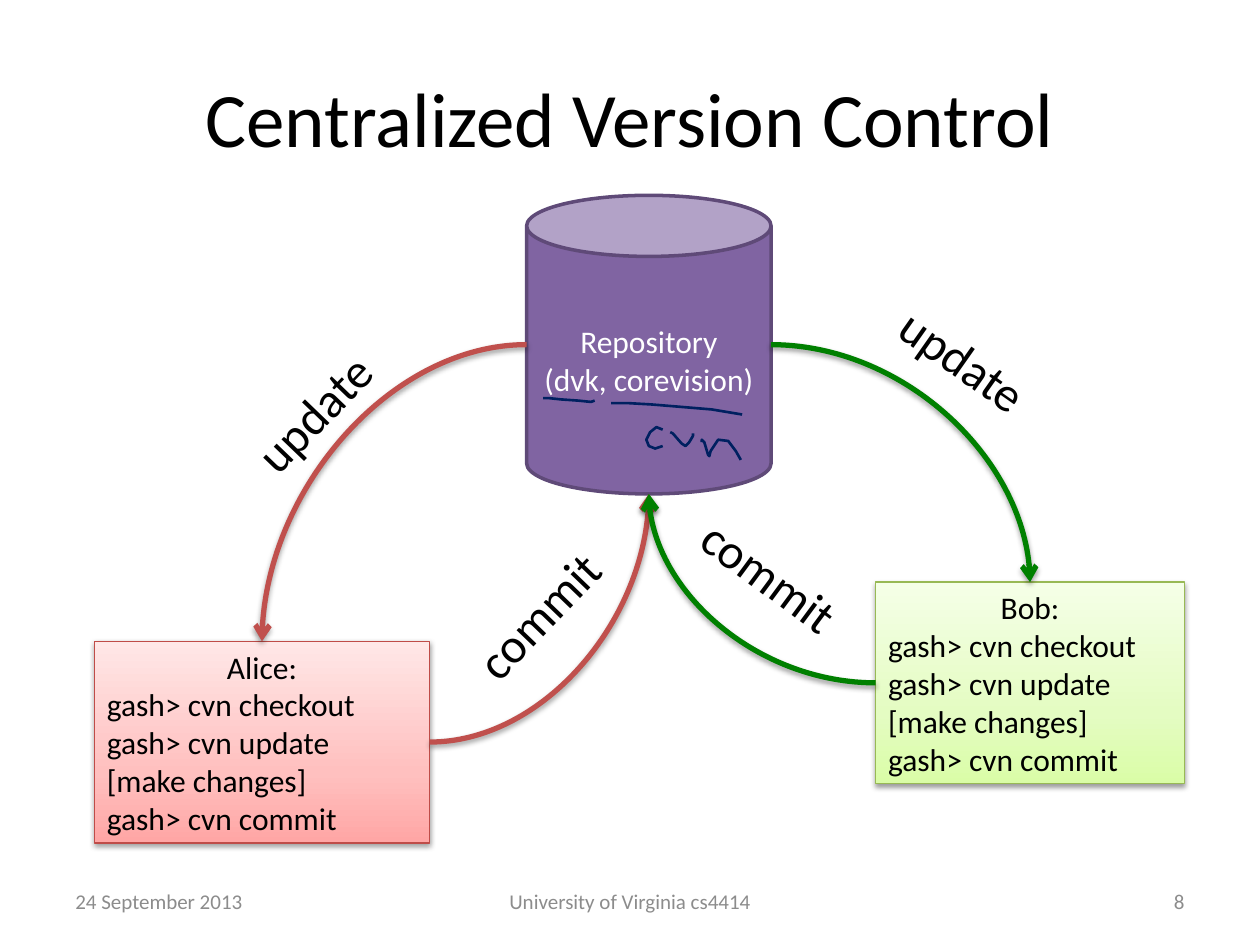
from dataclasses import dataclass

from lxml import etree
from pptx import Presentation
from pptx.dml.color import RGBColor
from pptx.enum.shapes import MSO_CONNECTOR, MSO_SHAPE
from pptx.enum.text import MSO_ANCHOR, MSO_AUTO_SIZE, PP_ALIGN
from pptx.oxml.ns import qn
from pptx.util import Inches, Pt

CURVE = MSO_CONNECTOR.CURVE
CAN, RECTANGLE = MSO_SHAPE.CAN, MSO_SHAPE.RECTANGLE
MIDDLE, TOP = MSO_ANCHOR.MIDDLE, MSO_ANCHOR.TOP
LEFT, CENTER, RIGHT = PP_ALIGN.LEFT, PP_ALIGN.CENTER, PP_ALIGN.RIGHT
GROW = MSO_AUTO_SIZE.SHAPE_TO_FIT_TEXT

WIDTH, HEIGHT = Inches(10), Inches(7.5)

# Connection site numbers of the two preset shapes
BOX_TOP, BOX_LEFT, BOX_RIGHT = 0, 1, 3
CAN_LEFT, CAN_BOTTOM, CAN_RIGHT = 2, 3, 4


@dataclass(frozen=True)
class Theme:
    font: str = "Calibri"
    title: int = 44
    label: int = 28
    body: int = 18
    footer: int = 12
    text: str = "000000"
    muted: str = "8C8C8C"
    inverse: str = "FFFFFF"
    repository: str = "8064A2"
    repository_edge: str = "5F4A78"
    alice_fill: tuple = ("FFA6A5", "FFC0BF", "FFE7E7")
    alice_edge: str = "BF4C48"
    alice_flow: str = "C0504D"
    bob_fill: tuple = ("DAFDA7", "E4FCC2", "F5FFE7")
    bob_edge: str = "98B955"
    bob_flow: str = "008000"
    ink: str = "002060"


THEME = Theme()
GRADIENT_STOPS = (0, 35, 100)
COMMANDS = ("gash> cvn checkout", "gash> cvn update", "[make changes]", "gash> cvn commit")

# Pen strokes, in thousandths of the slide's width: two underlines, then c, v, n
INK_STROKES = (
    ((472, 318), (469, 319), (459, 318), (445, 317), (436, 316), (431, 316)),
    ((485, 320), (490, 320), (499, 320), (517, 321), (541, 323), (565, 325),
     (583, 328), (589, 329)),
    ((526, 341), (521, 339), (516, 343), (513, 349), (515, 354), (520, 356), (526, 354)),
    ((532, 343), (534, 344), (541, 352), (544, 354), (547, 351), (550, 346), (550, 344)),
    ((557, 351), (557, 349), (559, 351), (562, 361), (563, 362), (564, 358),
     (570, 349), (578, 350), (584, 358), (588, 365)),
)


def area(left, top, width, height):
    """Turn percentages of the slide's size into lengths."""
    return (int(WIDTH * left / 100), int(HEIGHT * top / 100),
            int(WIDTH * width / 100), int(HEIGHT * height / 100))


def write(shape, lines, size, color, anchor=MIDDLE):
    """Fill a shape with (text, alignment) lines."""
    frame = shape.text_frame
    frame.word_wrap = True
    frame.vertical_anchor = anchor
    for index, (text, alignment) in enumerate(lines):
        paragraph = frame.add_paragraph() if index else frame.paragraphs[0]
        paragraph.alignment = alignment
        run = paragraph.add_run()
        run.text = text
        run.font.name = THEME.font
        run.font.size = Pt(size)
        run.font.color.rgb = RGBColor.from_string(color)


def set_line(shape, color, width):
    shape.line.color.rgb = RGBColor.from_string(color)
    shape.line.width = Pt(width)


def cast_shadow(properties):
    effects = properties.find(qn("a:effectLst"))
    if effects is None:
        effects = etree.SubElement(properties, qn("a:effectLst"))
    shadow = etree.SubElement(effects, qn("a:outerShdw"), blurRad="40000",
                              dist="20000", dir="5400000", rotWithShape="0")
    black = etree.SubElement(shadow, qn("a:srgbClr"), val="000000")
    etree.SubElement(black, qn("a:alpha"), val="38000")


def set_gradient(shape, colors):
    """Blend the colours from the bottom edge to the top."""
    shape.fill.gradient()
    shape.fill.gradient_angle = 90
    stops = next(shape._element.spPr.iter(qn("a:gsLst")))
    for stop in list(stops):
        stops.remove(stop)
    for position, color in zip(GRADIENT_STOPS, colors):
        stop = etree.SubElement(stops, qn("a:gs"), pos=str(position * 1000))
        etree.SubElement(stop, qn("a:srgbClr"), val=color)


def add_text(slide, place, text, size, color, alignment):
    box = slide.shapes.add_textbox(*area(*place))
    write(box, [(text, alignment)], size, color)


def add_flow_label(slide, place, text, rotation):
    label = slide.shapes.add_textbox(*area(*place))
    write(label, [(text, LEFT)], THEME.label, THEME.text, TOP)
    label.text_frame.word_wrap = False
    label.text_frame.auto_size = GROW
    label.rotation = rotation


def add_repository(slide):
    repository = slide.shapes.add_shape(CAN, *area(41.8, 20.67, 19.4, 31.6))
    repository.shadow.inherit = False
    repository.fill.solid()
    repository.fill.fore_color.rgb = RGBColor.from_string(THEME.repository)
    set_line(repository, THEME.repository_edge, 2)
    write(repository, [("Repository", CENTER), ("(dvk, corevision)", CENTER)],
          THEME.body, THEME.inverse)
    return repository


def add_developer(slide, place, name, fill, edge):
    box = slide.shapes.add_shape(RECTANGLE, *area(*place))
    box.shadow.inherit = False
    set_gradient(box, fill)
    set_line(box, edge, 0.75)
    cast_shadow(box._element.spPr)
    lines = [(name, CENTER)] + [(command, LEFT) for command in COMMANDS]
    write(box, lines, THEME.body, THEME.text)
    return box


def site_point(shape, site):
    """Locate a connection site; sites run top, left, bottom, right."""
    side = site - 1 if shape.auto_shape_type == CAN else site
    across, down = ((1, 0), (0, 1), (1, 2), (2, 1))[side]
    return shape.left + shape.width * across // 2, shape.top + shape.height * down // 2


def add_flow(slide, source, source_site, target, target_site, color):
    """Draw a quarter-turn arrow glued to both shapes."""
    flow = slide.shapes.add_connector(
        CURVE, *site_point(source, source_site), *site_point(target, target_site))
    flow._connect_begin_to(source, source_site)
    flow._connect_end_to(target, target_site)
    set_line(flow, color, 3)
    properties = flow._element.spPr
    properties.find(qn("a:prstGeom")).set("prst", "curvedConnector2")
    etree.SubElement(properties.find(qn("a:ln")), qn("a:tailEnd"), type="arrow")
    cast_shadow(properties)


def add_ink(slide):
    first, *others = INK_STROKES
    builder = slide.shapes.build_freeform(*first[0], scale=WIDTH / 1000)
    builder.add_line_segments(first[1:], close=False)
    for stroke in others:
        builder.move_to(*stroke[0])
        builder.add_line_segments(stroke[1:], close=False)
    ink = builder.convert_to_shape()
    ink.shadow.inherit = False
    ink.fill.background()
    set_line(ink, THEME.ink, 1.5)


def main():
    deck = Presentation()
    deck.slide_width, deck.slide_height = WIDTH, HEIGHT
    slide = deck.slides.add_slide(deck.slide_layouts[6])

    add_text(slide, (5, 4, 90, 16.67), "Centralized Version Control",
             THEME.title, THEME.text, CENTER)
    for left, width, text, alignment in (
            (5, 23.33, "24 September 2013", LEFT),
            (34.17, 31.67, "University of Virginia cs4414", CENTER),
            (71.67, 23.33, "8", RIGHT)):
        add_text(slide, (left, 92.67, width, 5.33), text, THEME.footer, THEME.muted, alignment)

    repository = add_repository(slide)
    alice = add_developer(slide, (7.5, 67.87, 26.6, 21.33), "Alice:",
                          THEME.alice_fill, THEME.alice_edge)
    bob = add_developer(slide, (69.5, 61.6, 24.5, 21.33), "Bob:",
                        THEME.bob_fill, THEME.bob_edge)

    add_flow(slide, repository, CAN_LEFT, alice, BOX_TOP, THEME.alice_flow)
    add_flow(slide, alice, BOX_RIGHT, repository, CAN_BOTTOM, THEME.alice_flow)
    add_flow(slide, repository, CAN_RIGHT, bob, BOX_TOP, THEME.bob_flow)
    add_flow(slide, bob, BOX_LEFT, repository, CAN_BOTTOM, THEME.bob_flow)

    add_flow_label(slide, (18.3, 39.73, 13.4, 7.6), "update", 313.9)
    add_flow_label(slide, (35.7, 61.2, 14.2, 7.6), "commit", 313.9)
    add_flow_label(slide, (69.9, 34.4, 13.4, 7.6), "update", 35.1)
    add_flow_label(slide, (54.1, 57.2, 14.2, 7.6), "commit", 36.5)
    add_ink(slide)

    deck.save("out.pptx")


if __name__ == "__main__":
    main()
